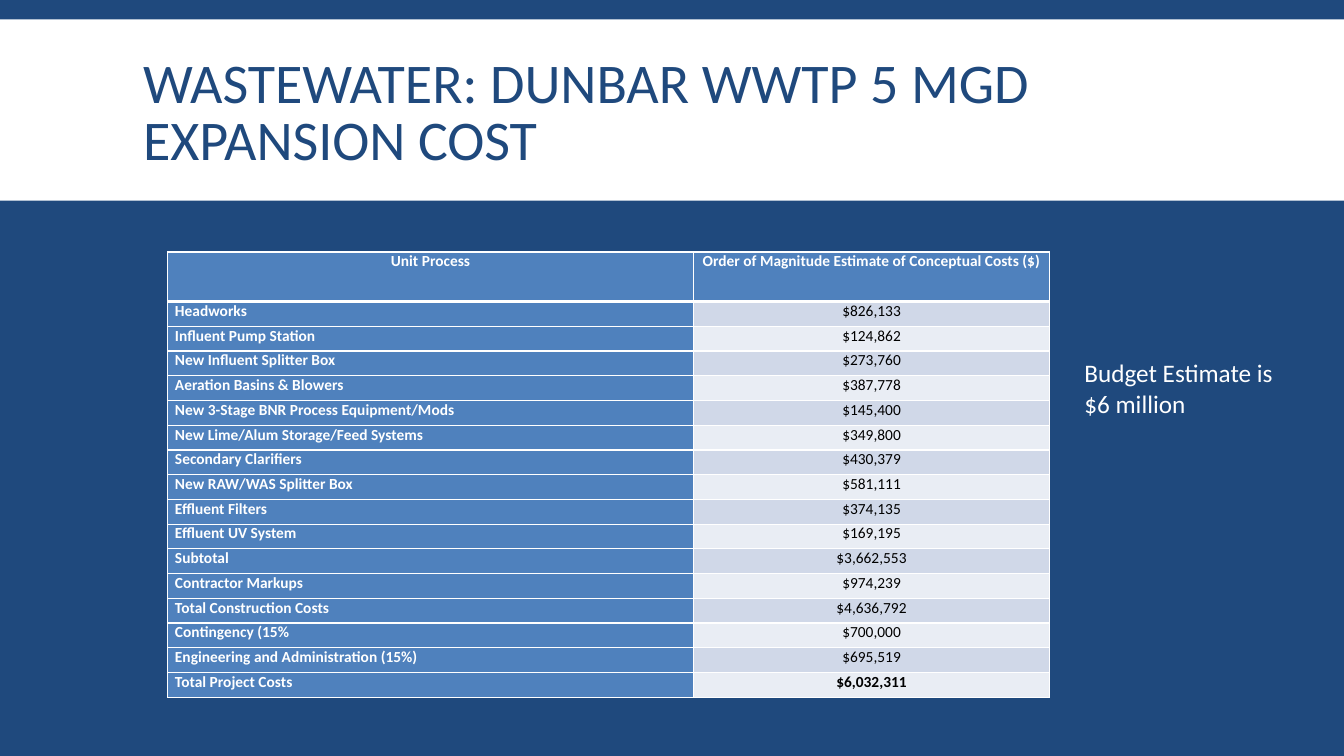
"""Build the wastewater expansion cost slide with its estimate table."""
import dataclasses

import lxml.etree
import pptx
import pptx.dml.color
import pptx.enum.shapes
import pptx.enum.text
import pptx.oxml.ns
import pptx.util

Cm = pptx.util.Cm
Pt = pptx.util.Pt
RGB = pptx.dml.color.RGBColor.from_string
ALIGN = pptx.enum.text.PP_ALIGN
qn = pptx.oxml.ns.qn


@dataclasses.dataclass(frozen=True)
class Theme:
    font: str = "Calibri"
    navy: str = "1F497D"
    blue: str = "4F81BD"
    white: str = "FFFFFF"
    black: str = "000000"
    bands: tuple = ("D0D8E8", "E9EDF4")
    title_size: int = 40
    note_size: int = 18
    table_size: int = 11


THEME = Theme()


def style(paragraph, size, color, align=ALIGN.LEFT, bold=False):
    paragraph.alignment = align
    paragraph.font.name = THEME.font
    paragraph.font.size = Pt(size)
    paragraph.font.bold = bold
    paragraph.font.color.rgb = RGB(color)


def set_borders(cell, top, bottom):
    properties = cell._tc.get_or_add_tcPr()
    for side, width in (("L", 1), ("R", 1), ("T", top), ("B", bottom)):
        line = lxml.etree.SubElement(properties, qn(f"a:ln{side}"), w=str(Pt(width)))
        fill = lxml.etree.SubElement(line, qn("a:solidFill"))
        lxml.etree.SubElement(fill, qn("a:srgbClr"), val=THEME.white)


costs = [
    ("Unit Process", "Order of Magnitude Estimate of Conceptual Costs ($)"),
    ("Headworks", "$826,133"),
    ("Influent Pump Station", "$124,862"),
    ("New Influent Splitter Box", "$273,760"),
    ("Aeration Basins & Blowers", "$387,778"),
    ("New 3-Stage BNR Process Equipment/Mods", "$145,400"),
    ("New Lime/Alum Storage/Feed Systems", "$349,800"),
    ("Secondary Clarifiers", "$430,379"),
    ("New RAW/WAS Splitter Box", "$581,111"),
    ("Effluent Filters", "$374,135"),
    ("Effluent UV System", "$169,195"),
    ("Subtotal", "$3,662,553"),
    ("Contractor Markups", "$974,239"),
    ("Total Construction Costs", "$4,636,792"),
    ("Contingency (15%", "$700,000"),
    ("Engineering and Administration (15%)", "$695,519"),
    ("Total Project Costs", "$6,032,311"),
]

deck = pptx.Presentation()
deck.slide_width = Cm(33.87)
deck.slide_height = Cm(19.05)
slide = deck.slides.add_slide(deck.slide_layouts[5])
slide.background.fill.solid()
slide.background.fill.fore_color.rgb = RGB(THEME.navy)

title_band = slide.shapes.add_shape(
    pptx.enum.shapes.MSO_SHAPE.RECTANGLE, 0, Cm(0.49), deck.slide_width, Cm(4.57))
title_band.shadow.inherit = False
title_band.fill.solid()
title_band.fill.fore_color.rgb = RGB(THEME.white)
title_band.line.fill.background()
slide.shapes.element.insert(2, title_band.element)

title = slide.shapes.title
title.left, title.top, title.width, title.height = Cm(3.35), Cm(0.79), Cm(27.18), Cm(4.19)
title.text_frame.text = "WASTEWATER: DUNBAR WWTP 5 MGD EXPANSION COST"
title.text_frame.word_wrap = True
title.text_frame.auto_size = pptx.enum.text.MSO_AUTO_SIZE.NONE
title.text_frame.vertical_anchor = pptx.enum.text.MSO_ANCHOR.MIDDLE
title.text_frame.paragraphs[0].line_spacing = 0.85
style(title.text_frame.paragraphs[0], THEME.title_size, THEME.navy)

table_height, header_height = Cm(11.23), Cm(1.25)
estimate = slide.shapes.add_table(
    len(costs), 2, Cm(4.22), Cm(6.35), Cm(22.23), table_height).table
estimate.columns[0].width = Cm(13.26)
estimate.columns[1].width = Cm(8.97)
for row, entries in enumerate(costs):
    header = row == 0
    total = row == len(costs) - 1
    estimate.rows[row].height = (
        header_height if header else (table_height - header_height) // (len(costs) - 1))
    for column, entry in enumerate(entries):
        amount = column == 1 and not header
        cell = estimate.cell(row, column)
        cell.margin_left = cell.margin_right = Cm(0.19)
        cell.margin_top = cell.margin_bottom = 0
        set_borders(cell, 3 if row == 1 else 1, 3 if header else 1)
        cell.fill.solid()
        cell.fill.fore_color.rgb = RGB(THEME.bands[(row - 1) % 2] if amount else THEME.blue)
        cell.text = entry
        style(cell.text_frame.paragraphs[0], THEME.table_size,
              THEME.black if amount else THEME.white,
              ALIGN.CENTER if header or amount else ALIGN.LEFT,
              bold=total or not amount)

budget_note = slide.shapes.add_textbox(Cm(27.08), Cm(8.89), Cm(5.51), Cm(1.8)).text_frame
budget_note.word_wrap = True
budget_note.text = "Budget Estimate is $6 million"
style(budget_note.paragraphs[0], THEME.note_size, THEME.white)

deck.save("out.pptx")
